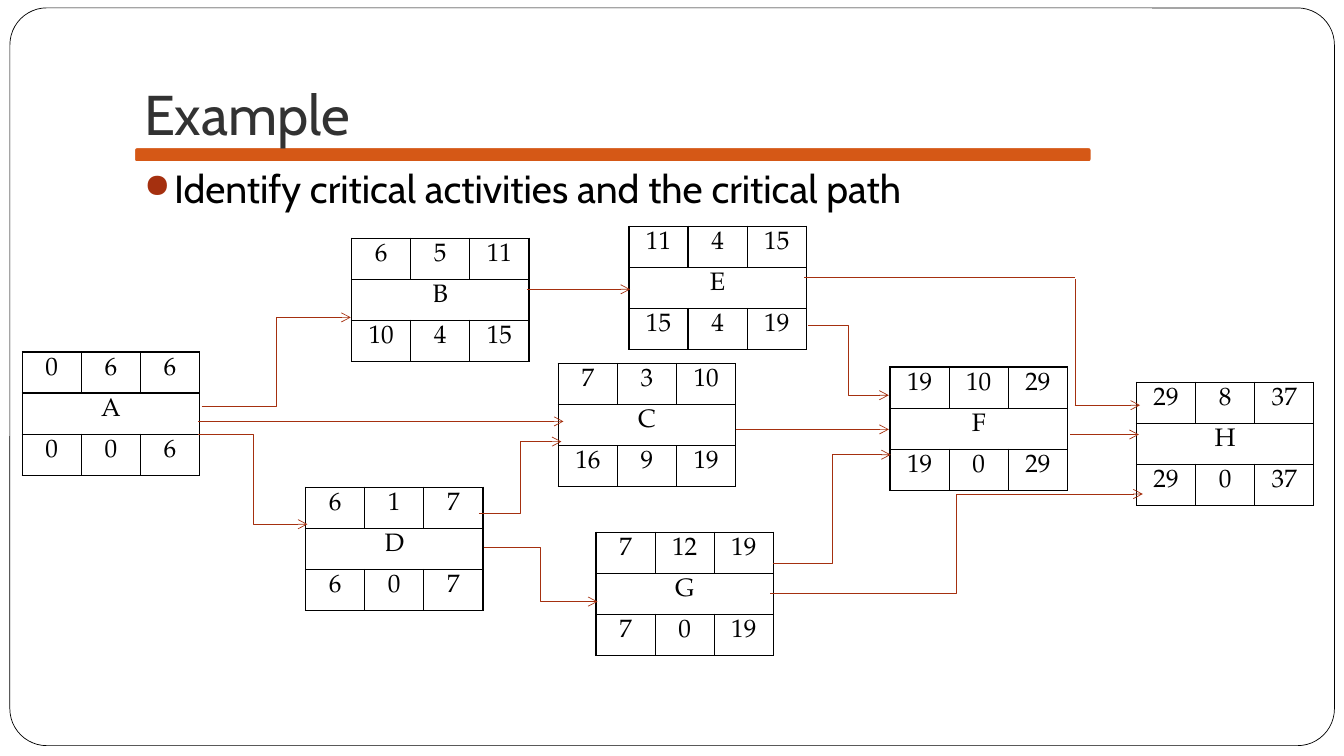
"""Build a slide with an activity network and its critical path."""
from dataclasses import dataclass

from lxml import etree
from pptx import Presentation
from pptx import util as u
from pptx.dml import color, fill
from pptx.enum import shapes, text
from pptx.oxml import ns
from pptx.shapes import connector as lines
from pptx.slide import Slide
from pptx.text import text as content

BLACK, WHITE, ORANGE, RUST, GREY = "000000", "FFFFFF", "D55816", "A5300F", "323232"
HEADING_FONT, TABLE_FONT = "Cabin", "TeX Gyre Pagella"
COLUMN_WIDTH, ROW_HEIGHT = u.Cm(1.49), u.Cm(1.035)


@dataclass(frozen=True)
class Activity:
    name: str
    left: float
    top: float
    early: tuple[int, int, int]
    late: tuple[int, int, int]


@dataclass(frozen=True)
class Link:
    start: tuple[float, float]
    end: tuple[float, float]
    arrow: bool = True


@dataclass(frozen=True)
class Panel:
    left: float
    top: float
    width: float
    height: float
    fill: str
    line: str
    line_width: float
    rounding: float


PANELS = [
    Panel(0.25, 0.2, 33.38, 18.59, WHITE, BLACK, 0.5, 0.05),
    Panel(3.38, 3.71, 24.13, 0.38, ORANGE, WHITE, 1.5, 0.17),
]

ACTIVITIES = [
    Activity("A", 0.56, 8.87, (0, 6, 6), (0, 0, 6)),
    Activity("B", 8.86, 6, (6, 5, 11), (10, 4, 15)),
    Activity("E", 15.85, 5.7, (11, 4, 15), (15, 4, 19)),
    Activity("C", 14.07, 9.16, (7, 3, 10), (16, 9, 19)),
    Activity("D", 7.7, 12.28, (6, 1, 7), (6, 0, 7)),
    Activity("G", 15.02, 13.41, (7, 12, 19), (7, 0, 19)),
    Activity("F", 22.43, 9.25, (19, 10, 29), (19, 0, 29)),
    Activity("H", 28.64, 9.63, (29, 8, 37), (29, 0, 37)),
]

LINKS = [
    Link((5.08, 10.24), (8.84, 8)),
    Link((5, 10.95), (7.75, 13.21)),
    Link((5, 10.62), (14.2, 10.62)),
    Link((12.07, 12.95), (14.15, 11.13)),
    Link((13.28, 7.29), (15.88, 7.29)),
    Link((12.19, 13.79), (15.06, 15.16)),
    Link((20.37, 8.2), (22.4, 9.96)),
    Link((19.48, 14.2), (22.45, 11.46)),
    Link((18.54, 10.82), (22.4, 10.82)),
    Link((19.41, 14.96), (28.8, 12.45)),
    Link((26.97, 10.95), (28.7, 10.95)),
    Link((20.27, 6.99), (27.1, 6.99), arrow=False),
    Link((27.1, 7.04), (27.1, 10.21), arrow=False),
    Link((27.08, 10.21), (28.73, 10.21)),
]


def paint(target: fill.FillFormat, value: str) -> None:
    """Give a fill one solid colour."""
    target.solid()
    target.fore_color.rgb = color.RGBColor.from_string(value)


def add_child(parent: etree._Element, tag: str, **attributes: str) -> etree._Element:
    """Append a DrawingML element."""
    return etree.SubElement(parent, ns.qn(tag), attributes)


def write(paragraph: content._Paragraph, words: str, font: str, size: int, value: str) -> None:
    """Fill a paragraph and set its font."""
    paragraph.text = words
    paragraph.font.name = font
    paragraph.font.size = u.Pt(size)
    paint(paragraph.font.fill, value)


def add_panel(slide: Slide, panel: Panel) -> None:
    """Draw a rounded rectangle."""
    shape = slide.shapes.add_shape(
        shapes.MSO_SHAPE.ROUNDED_RECTANGLE,
        u.Cm(panel.left), u.Cm(panel.top), u.Cm(panel.width), u.Cm(panel.height),
    )
    shape.adjustments[0] = panel.rounding
    shape.shadow.inherit = False
    paint(shape.fill, panel.fill)
    paint(shape.line.fill, panel.line)
    shape.line.width = u.Pt(panel.line_width)


def add_text(slide: Slide, top: float, height: float, words: str, size: int,
             value: str) -> content.TextFrame:
    """Add a wrapped text box in the heading column."""
    frame = slide.shapes.add_textbox(
        u.Cm(3.38), u.Cm(top), u.Cm(28.78), u.Cm(height)
    ).text_frame
    frame.word_wrap = True
    write(frame.paragraphs[0], words, HEADING_FONT, size, value)
    return frame


def add_bullet(paragraph: content._Paragraph) -> None:
    """Give a paragraph a hanging round bullet."""
    paragraph.space_before = u.Pt(5.8)
    properties = paragraph._p.get_or_add_pPr()
    indent = u.Cm(0.76)
    properties.set("marL", str(indent))
    properties.set("indent", str(-indent))
    add_child(add_child(properties, "a:buClr"), "a:srgbClr", val=RUST)
    add_child(properties, "a:buSzPct", val="85000")
    add_child(properties, "a:buChar", char="●")


def add_activity(slide: Slide, activity: Activity) -> None:
    """Draw an activity as a table with a merged name row."""
    table = slide.shapes.add_table(
        3, 3, u.Cm(activity.left), u.Cm(activity.top), COLUMN_WIDTH * 3, ROW_HEIGHT * 3
    ).table
    table.first_row = table.horz_banding = False
    for column in table.columns:
        column.width = COLUMN_WIDTH
    for row in table.rows:
        row.height = ROW_HEIGHT
    for cell in table.iter_cells():
        properties = cell._tc.get_or_add_tcPr()
        for side in "LRTB":
            border = add_child(properties, f"a:ln{side}", w=str(u.Pt(1)))
            add_child(add_child(border, "a:solidFill"), "a:srgbClr", val=BLACK)
        cell.fill.background()
    table.cell(1, 0).merge(table.cell(1, 2))
    for row, values in enumerate((activity.early, (activity.name,), activity.late)):
        for column, value in enumerate(values):
            paragraph = table.cell(row, column).text_frame.paragraphs[0]
            write(paragraph, str(value), TABLE_FONT, 18, BLACK)
            paragraph.alignment = text.PP_ALIGN.CENTER


def add_link(slide: Slide, link: Link) -> lines.Connector:
    """Draw a link, bent where its ends differ in both directions."""
    bent = all(a != b for a, b in zip(link.start, link.end))
    kind = shapes.MSO_CONNECTOR.ELBOW if bent else shapes.MSO_CONNECTOR.STRAIGHT
    connector = slide.shapes.add_connector(kind, *map(u.Cm, link.start + link.end))
    paint(connector.line.fill, RUST)
    connector.line.width = u.Pt(0.5)
    if link.arrow:
        add_child(connector.line._get_or_add_ln(), "a:tailEnd", type="arrow")
    add_child(connector._element.spPr, "a:effectLst")
    return connector


def main() -> None:
    """Build and save the presentation."""
    presentation = Presentation()
    presentation.slide_width, presentation.slide_height = u.Cm(33.87), u.Cm(19.05)
    slide = presentation.slides.add_slide(presentation.slide_layouts[6])
    for panel in PANELS:
        add_panel(slide, panel)
    body = add_text(slide, 4.01, 1.6, "Identify critical activities and the critical path", 28, BLACK)
    add_bullet(body.paragraphs[0])
    title = add_text(slide, 0.76, 3.18, "Example", 40, GREY)
    title.vertical_anchor = text.MSO_ANCHOR.BOTTOM
    title.margin_bottom = u.Cm(0.25)
    for activity in ACTIVITIES:
        add_activity(slide, activity)
    for link in LINKS:
        add_link(slide, link)
    presentation.save("out.pptx")


if __name__ == "__main__":
    main()
